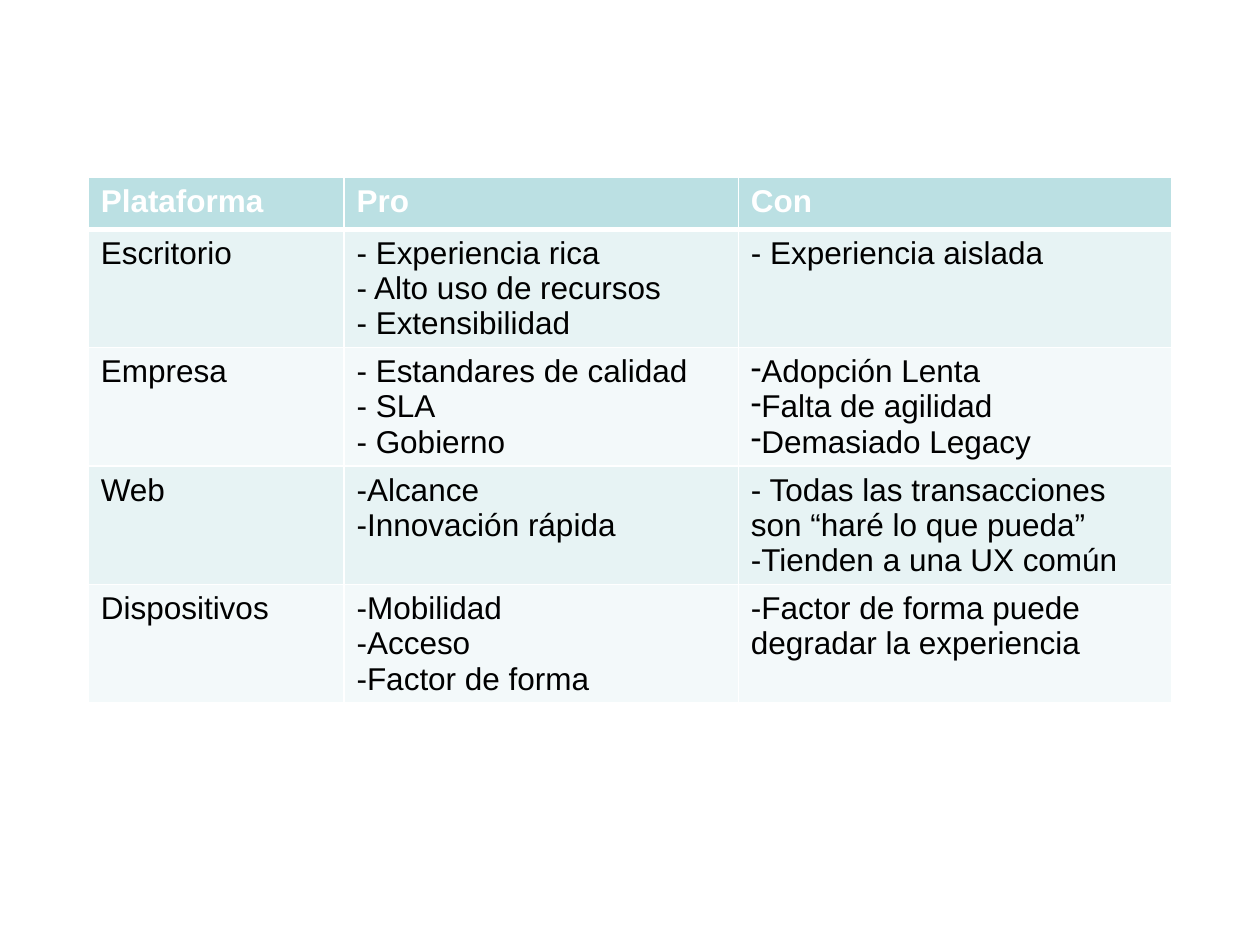
from lxml.etree import SubElement as Sub
from pptx import Presentation as Deck
from pptx.dml.color import RGBColor as Rgb
from pptx.oxml.ns import qn
from pptx.util import Inches, Pt

HUES = {"head": "BBE0E3", "odd": "E7F3F4", "even": "F3F9FA",
        "white": "FFFFFF", "black": "000000"}
COLS = (2.03, 3.13, 3.44)
HEAD, BODY = 0.41, 0.94
ROWS = (
    ("Plataforma", "Pro", "Con"),
    ("Escritorio",
     "- Experiencia rica\n- Alto uso de recursos\n- Extensibilidad",
     "- Experiencia aislada"),
    ("Empresa",
     "- Estandares de calidad\n- SLA\n- Gobierno",
     "Adopción Lenta\nFalta de agilidad\nDemasiado Legacy"),
    ("Web",
     "-Alcance\n-Innovación rápida",
     "- Todas las transacciones son “haré lo que pueda”\n-Tienden a una UX común"),
    ("Dispositivos",
     "-Mobilidad\n-Acceso\n-Factor de forma",
     "-Factor de forma puede degradar la experiencia"),
)
DASHED = {(2, 2)}


def write(frame, text, size=18, hue="black", bold=False, mark=None):
    frame.text = text
    for para in frame.paragraphs:
        if mark:
            Sub(para._p.get_or_add_pPr(), qn("a:buChar"), char=mark)
        font = para.runs[0].font
        font.name, font.size, font.bold = "Arial", Pt(size), bold
        font.color.rgb = Rgb.from_string(HUES[hue])


def edge(cell, **widths):
    props = cell._tc.get_or_add_tcPr()
    for side in "LRTB":
        line = Sub(props, qn(f"a:ln{side}"), w=str(Pt(widths.get(side, 1))))
        Sub(Sub(line, qn("a:solidFill")), qn("a:srgbClr"), val=HUES["white"])


def paint(cell, hue):
    cell.fill.solid()
    cell.fill.fore_color.rgb = Rgb.from_string(HUES[hue])


def grid(slide, left, top):
    high = HEAD + BODY * (len(ROWS) - 1)
    table = slide.shapes.add_table(
        len(ROWS), len(COLS), Inches(left), Inches(top),
        Inches(sum(COLS)), Inches(high)).table
    for col, wide in zip(table.columns, COLS):
        col.width = Inches(wide)
    for r, texts in enumerate(ROWS):
        head = r == 0
        table.rows[r].height = Inches(HEAD if head else BODY)
        for c, text in enumerate(texts):
            cell = table.cell(r, c)
            edge(cell, T=3 if r == 1 else 1, B=3 if head else 1)
            paint(cell, "head" if head else "odd" if r % 2 else "even")
            write(cell.text_frame, text, hue="white" if head else "black",
                  bold=head, mark="-" if (r, c) in DASHED else None)


def main():
    deck = Deck()
    deck.slide_width, deck.slide_height = Inches(10), Inches(7.5)
    slide = deck.slides.add_slide(deck.slide_layouts[6])
    grid(slide, 0.7, 1.41)
    deck.save("out.pptx")


if __name__ == "__main__":
    main()
